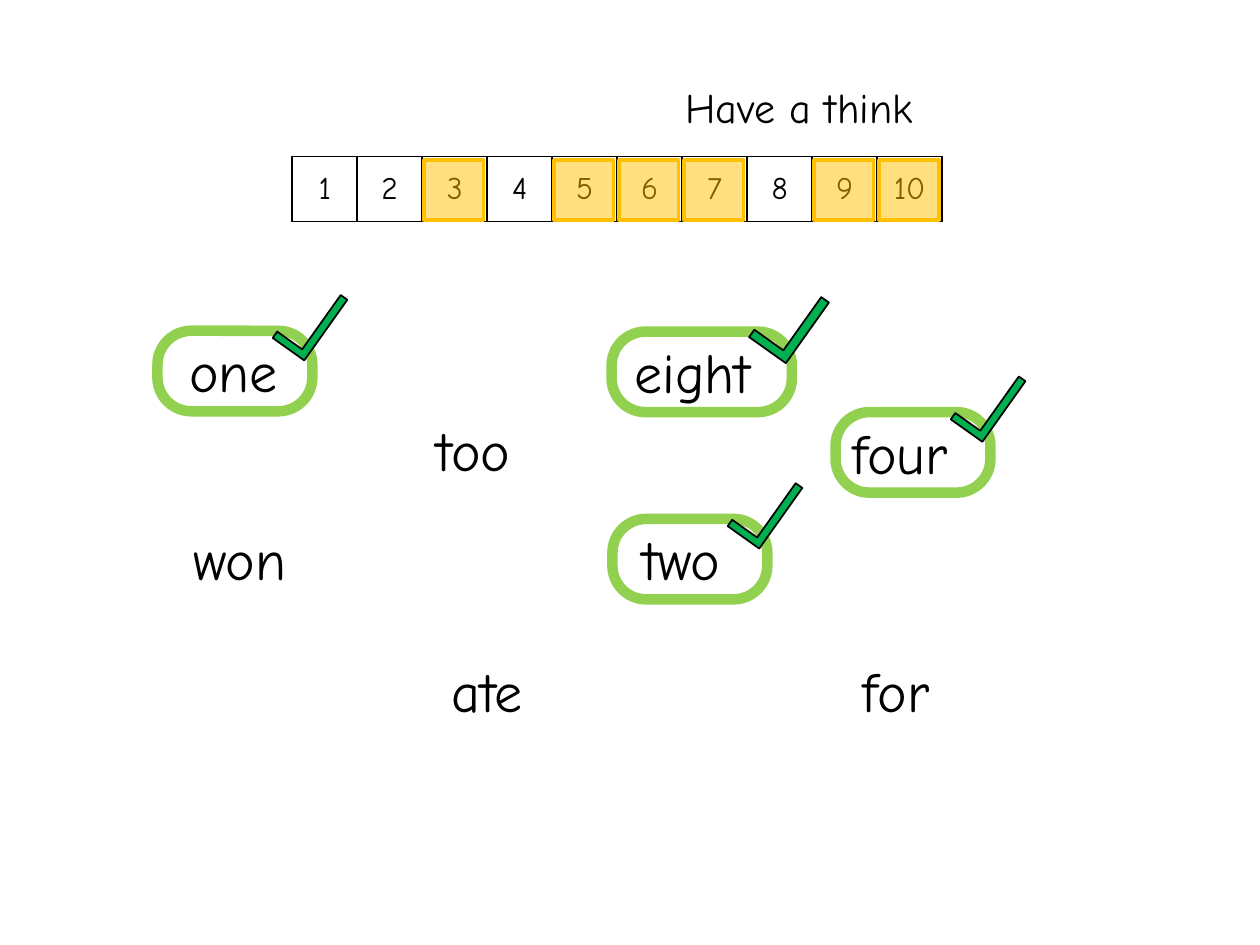
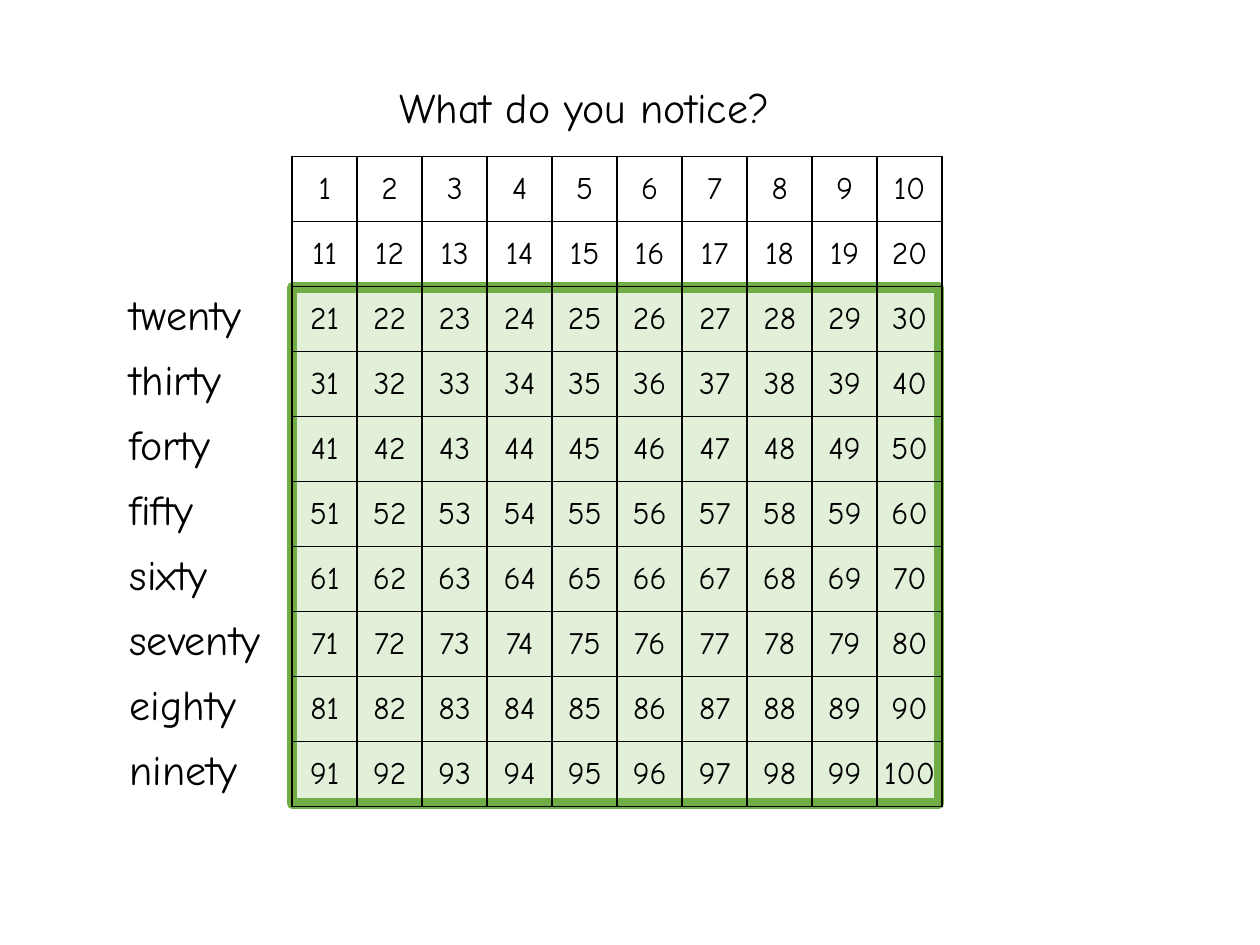
from lxml import etree
from pptx import Presentation
from pptx.dml.color import RGBColor
from pptx.enum.shapes import MSO_SHAPE
from pptx.enum.text import MSO_ANCHOR, MSO_AUTO_SIZE, PP_ALIGN
from pptx.oxml.ns import qn
from pptx.util import Pt

RECTANGLE = MSO_SHAPE.RECTANGLE
ROUNDED = MSO_SHAPE.ROUNDED_RECTANGLE
CORNER = MSO_SHAPE.CORNER
TOP, MIDDLE = MSO_ANCHOR.TOP, MSO_ANCHOR.MIDDLE
LEFT, CENTER = PP_ALIGN.LEFT, PP_ALIGN.CENTER
NO_AUTOFIT = MSO_AUTO_SIZE.NONE

FONT = "Comic Neue"
BLACK = RGBColor(0x00, 0x00, 0x00)
AMBER = RGBColor(0xFF, 0xC0, 0x00)
LIME = RGBColor(0x92, 0xD0, 0x50)
TICK_GREEN = RGBColor(0x00, 0xB0, 0x50)
PALE_GREEN = RGBColor(0xE2, 0xF0, 0xD9)
FRAME_GREEN = RGBColor(0x70, 0xAD, 0x47)

# Content: words as (text, left, top, width)
WORDS = [
    ("one", 101, 188.5, 111),
    ("won", 103.5, 296, 91),
    ("too", 242.5, 234, 63),
    ("two", 360, 296, 93),
    ("four", 480, 235.5, 107),
    ("for", 486, 371.5, 63),
    ("eight", 355.5, 189.5, 102),
    ("ate", 251, 371.5, 63),
]
# Rings around the number words as (left, top, width)
RINGS = [(90, 189, 88.5), (350, 296.5, 88.5), (477.5, 235.5, 88.5), (349.5, 189.5, 103)]
HIGHLIGHTED_NUMBERS = [3, 5, 6, 7, 9, 10]
TENS = ["twenty", "thirty", "forty", "fifty", "sixty", "seventy", "eighty", "ninety"]

COLUMNS = 10
CELL = 37.15
GRID_LEFT = 167
GRID_TOP = 89.5
TITLE_TOP = 43
TITLE_HEIGHT = 36.5
RING_HEIGHT = 46


def write(frame, text, size, alignment=LEFT):
    paragraph = frame.paragraphs[0]
    paragraph.alignment = alignment
    run = paragraph.add_run()
    run.text = text
    run.font.name = FONT
    run.font.size = Pt(size)
    run.font.color.rgb = BLACK


def add_titled_slide(presentation, title, left, width):
    slide = presentation.slides.add_slide(presentation.slide_layouts[5])
    placeholder = slide.shapes.title
    placeholder.left, placeholder.top = Pt(left), Pt(TITLE_TOP)
    placeholder.width, placeholder.height = Pt(width), Pt(TITLE_HEIGHT)
    frame = placeholder.text_frame
    frame.auto_size = NO_AUTOFIT
    frame.word_wrap = True
    frame.vertical_anchor = TOP
    write(frame, title, 24)
    return slide


def add_label(slide, text, left, top, width, height, size):
    box = slide.shapes.add_textbox(Pt(left), Pt(top), Pt(width), Pt(height))
    box.text_frame.word_wrap = True
    write(box.text_frame, text, size)


def add_outlined(slide, kind, left, top, width, height, line, line_width, fill=None):
    shape = slide.shapes.add_shape(kind, Pt(left), Pt(top), Pt(width), Pt(height))
    shape.shadow.inherit = False
    shape.line.color.rgb = line
    shape.line.width = Pt(line_width)
    if fill is None:
        shape.fill.background()
    else:
        shape.fill.solid()
        shape.fill.fore_color.rgb = fill
    return shape


def add_borders(cell):
    properties = cell._tc.get_or_add_tcPr()
    for side in ("a:lnL", "a:lnR", "a:lnT", "a:lnB"):
        border = etree.SubElement(properties, qn(side), w=str(Pt(1)))
        fill = etree.SubElement(border, qn("a:solidFill"))
        etree.SubElement(fill, qn("a:srgbClr"), val=str(BLACK))


def add_number_grid(slide, rows):
    """Add a table that counts from 1, ten numbers to a row."""
    table = slide.shapes.add_table(
        rows, COLUMNS, Pt(GRID_LEFT), Pt(GRID_TOP), Pt(CELL * COLUMNS), Pt(CELL * rows)
    ).table
    table.first_row = table.horz_banding = False
    for column in table.columns:
        column.width = Pt(CELL)
    for row in table.rows:
        row.height = Pt(CELL)
    for number, cell in enumerate(table.iter_cells(), start=1):
        add_borders(cell)
        cell.fill.background()
        cell.margin_left = cell.margin_right = cell.margin_top = cell.margin_bottom = 0
        cell.vertical_anchor = MIDDLE
        write(cell.text_frame, str(number), 18, CENTER)


def add_highlight(slide, number):
    left = GRID_LEFT + (number - 1) * CELL + 1
    shape = add_outlined(slide, RECTANGLE, left, GRID_TOP + 2, 34, 34, AMBER, 2.25, AMBER)
    color = shape._element.spPr.find(qn("a:solidFill")).find(qn("a:srgbClr"))
    etree.SubElement(color, qn("a:alpha"), val="50000")


def add_ticked_ring(slide, left, top, width):
    ring = add_outlined(slide, ROUNDED, left, top, width, RING_HEIGHT, LIME, 6)
    ring.adjustments[0] = 0.42
    tick_left = left + width * 0.86
    tick = add_outlined(slide, CORNER, tick_left, top - 28, width / 4, 42.5,
                        BLACK, 1, TICK_GREEN)
    tick.adjustments[0] = 0.2
    tick.adjustments[1] = 0.21
    tick.rotation = 35.4
    tick._element.spPr.find(qn("a:xfrm")).set("flipH", "1")


def build_think_slide(presentation):
    slide = add_titled_slide(presentation, "Have a think", 384.5, 191.5)
    add_number_grid(slide, 1)
    for number in HIGHLIGHTED_NUMBERS:
        add_highlight(slide, number)
    for text, left, top, width in WORDS:
        add_label(slide, text, left, top, width, RING_HEIGHT, 32)
    for ring in RINGS:
        add_ticked_ring(slide, *ring)


def build_notice_slide(presentation):
    slide = add_titled_slide(presentation, "What do you notice?", 221, 263.5)
    tens_top = GRID_TOP + 2 * CELL
    add_outlined(slide, RECTANGLE, GRID_LEFT, tens_top + 0.5, 369.5, 295,
                 FRAME_GREEN, 6, PALE_GREEN)
    for index, word in enumerate(TENS):
        add_label(slide, word, 67, tens_top - 2.5 + index * CELL, 110, 36.5, 24)
    add_number_grid(slide, COLUMNS)


def main():
    presentation = Presentation()
    presentation.slide_width, presentation.slide_height = Pt(720), Pt(540)
    build_think_slide(presentation)
    build_notice_slide(presentation)
    presentation.save("out.pptx")


if __name__ == "__main__":
    main()
